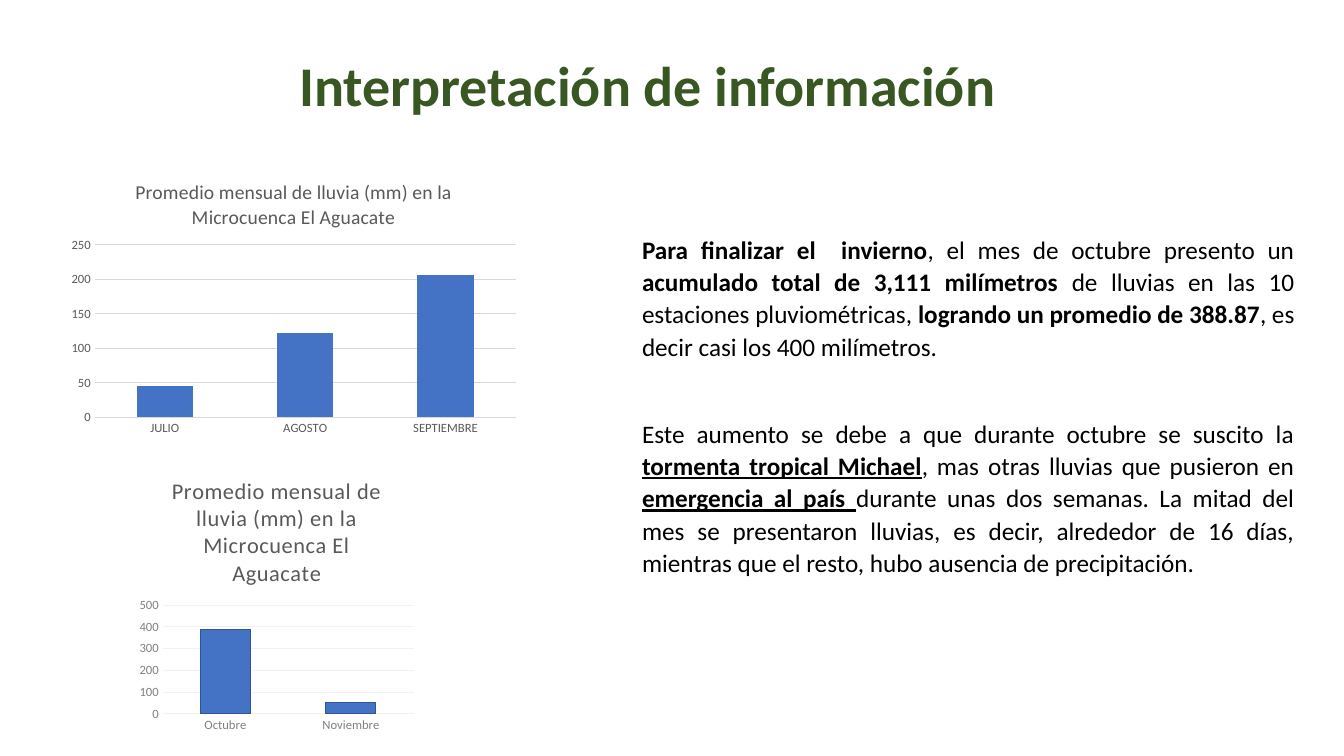
from lxml import etree
from pptx import Presentation
from pptx import util as u
from pptx.chart.data import CategoryChartData
from pptx.dml.color import RGBColor
from pptx.enum import chart as charts, text
from pptx.oxml import ns

FONT = "Calibri"
BLACK = RGBColor(0x00, 0x00, 0x00)
GREEN = RGBColor(0x38, 0x57, 0x23)
BLUE = RGBColor(0x44, 0x72, 0xC4)
DARK_BLUE = RGBColor(0x2F, 0x55, 0x97)
GRAY = RGBColor(0x59, 0x59, 0x59)
MID_GRAY = RGBColor(0x80, 0x80, 0x80)
LIGHT_GRAY = RGBColor(0xD9, 0xD9, 0xD9)
PALE_GRAY = RGBColor(0xF2, 0xF2, 0xF2)

TITLE = "Interpretación de información"
TITLE_BOX = (6.38, 1.14, 19.86, 1.96)
BODY_BOX = (15.93, 5.72, 16.94, 9.02)
CHART_TITLE = "Promedio mensual de lluvia (mm) en la Microcuenca El Aguacate"
NORMAL = {}
BOLD = {"bold": True}
MARKED = {"bold": True, "underline": True}

CHARTS = [
    {"box": (3.38, 11.61, 7.19, 7.01), "values": {"Octubre": 390, "Noviembre": 50},
     "maximum": 500, "step": 100, "title_size": 16, "spacing": 50,
     "label": MID_GRAY, "grid": PALE_GRAY, "outline": DARK_BLUE,
     "plot": {"x": 0.1, "y": 0.52, "w": 0.88, "h": 0.39}},
    {"box": (1.57, 4.14, 11.66, 7.01),
     "values": {"JULIO": 45, "AGOSTO": 122, "SEPTIEMBRE": 207},
     "maximum": 250, "step": 50, "title_size": 14, "spacing": 0,
     "label": GRAY, "grid": LIGHT_GRAY, "outline": None,
     "plot": {"x": 0.07, "y": 0.29, "w": 0.91, "h": 0.62}},
]

BODY = [
    (39, [("Para finalizar el  invierno", BOLD),
          (", el mes de octubre presento un ", NORMAL),
          ("acumulado total de 3,111 milímetros ", BOLD),
          ("de lluvias en las 10 estaciones pluviométricas, ", NORMAL),
          ("logrando un promedio de 388.87", BOLD),
          (", es decir casi los 400 milímetros.", NORMAL)]),
    (8, [("Este aumento se debe a que durante octubre se suscito la ", NORMAL),
         ("tormenta tropical Michael", MARKED),
         (", mas otras lluvias que pusieron en ", NORMAL),
         ("emergencia al país ", MARKED),
         ("durante unas dos semanas. La mitad del mes se presentaron lluvias, "
          "es decir, alrededor de 16 días, mientras que el resto, hubo ausencia "
          "de precipitación.", NORMAL)]),
]


def assign(target, **values):
    for name, value in values.items():
        setattr(target, name, value)


def style(font, size, color, **values):
    assign(font, name=FONT, size=u.Pt(size), **values)
    font.color.rgb = color


def lengths(box):
    return [u.Cm(value) for value in box]


def place_plot(chart, plot):
    area = chart.plots[0]._element.getparent()
    for old in area.findall(ns.qn("c:layout")):
        area.remove(old)
    layout = etree.Element(ns.qn("c:layout"))
    area.insert(0, layout)
    manual = etree.SubElement(layout, ns.qn("c:manualLayout"))
    settings = {"layoutTarget": "inner", "xMode": "edge", "yMode": "edge", **plot}
    for name, value in settings.items():
        etree.SubElement(manual, ns.qn("c:" + name)).set("val", str(value))


def add_rain_chart(slide, item):
    data = CategoryChartData()
    data.categories = list(item["values"])
    data.add_series("Series 1", list(item["values"].values()))
    chart = slide.shapes.add_chart(
        charts.XL_CHART_TYPE.COLUMN_CLUSTERED, *lengths(item["box"]), data).chart
    assign(chart, has_legend=False, has_title=True)
    style(chart.font, 10, BLACK)

    paragraph = chart.chart_title.text_frame.paragraphs[0]
    run = paragraph.add_run()
    run.text = CHART_TITLE
    style(run.font, item["title_size"], GRAY, bold=False)
    run.font._element.set("spc", str(item["spacing"]))
    chart.chart_title.include_in_layout = False

    for axis in (chart.category_axis, chart.value_axis):
        assign(axis, major_tick_mark=charts.XL_TICK_MARK.NONE,
               minor_tick_mark=charts.XL_TICK_MARK.NONE)
        style(axis.tick_labels.font, 9, item["label"])
        axis.format.line.fill.background()
    assign(chart.value_axis, minimum_scale=0, maximum_scale=item["maximum"],
           major_unit=item["step"], has_major_gridlines=True)
    grid = chart.value_axis.major_gridlines.format.line
    grid.color.rgb = item["grid"]
    grid.width = u.Pt(0.75)

    assign(chart.plots[0], gap_width=150, vary_by_categories=False)
    bars = chart.plots[0].series[0].format
    bars.fill.solid()
    bars.fill.fore_color.rgb = BLUE
    if item["outline"]:
        bars.line.color.rgb = item["outline"]
        bars.line.width = u.Pt(0.75)
    else:
        bars.line.fill.background()
    place_plot(chart, item["plot"])


def add_title(slide):
    title = slide.shapes.title
    for name, value in zip(("left", "top", "width", "height"), lengths(TITLE_BOX)):
        setattr(title, name, value)
    frame = title.text_frame
    frame.text = TITLE
    assign(frame, word_wrap=True, vertical_anchor=text.MSO_ANCHOR.TOP,
           auto_size=text.MSO_AUTO_SIZE.NONE)
    paragraph = frame.paragraphs[0]
    assign(paragraph, alignment=text.PP_ALIGN.CENTER, line_spacing=1.0)
    style(paragraph.runs[0].font, 40, GREEN, bold=True)


def add_body(slide):
    frame = slide.shapes.add_textbox(*lengths(BODY_BOX)).text_frame
    frame.word_wrap = True
    for index, (space_after, runs) in enumerate(BODY):
        paragraph = frame.add_paragraph() if index else frame.paragraphs[0]
        assign(paragraph, alignment=text.PP_ALIGN.JUSTIFY, line_spacing=1.07,
               space_after=u.Pt(space_after))
        for words, emphasis in runs:
            run = paragraph.add_run()
            run.text = words
            style(run.font, 18, BLACK, **emphasis)


def main():
    presentation = Presentation()
    assign(presentation, slide_width=u.Cm(33.87), slide_height=u.Cm(19.05))
    slide = presentation.slides.add_slide(presentation.slide_layouts[5])
    for item in CHARTS:
        add_rain_chart(slide, item)
    add_body(slide)
    add_title(slide)
    presentation.save("out.pptx")


if __name__ == "__main__":
    main()
